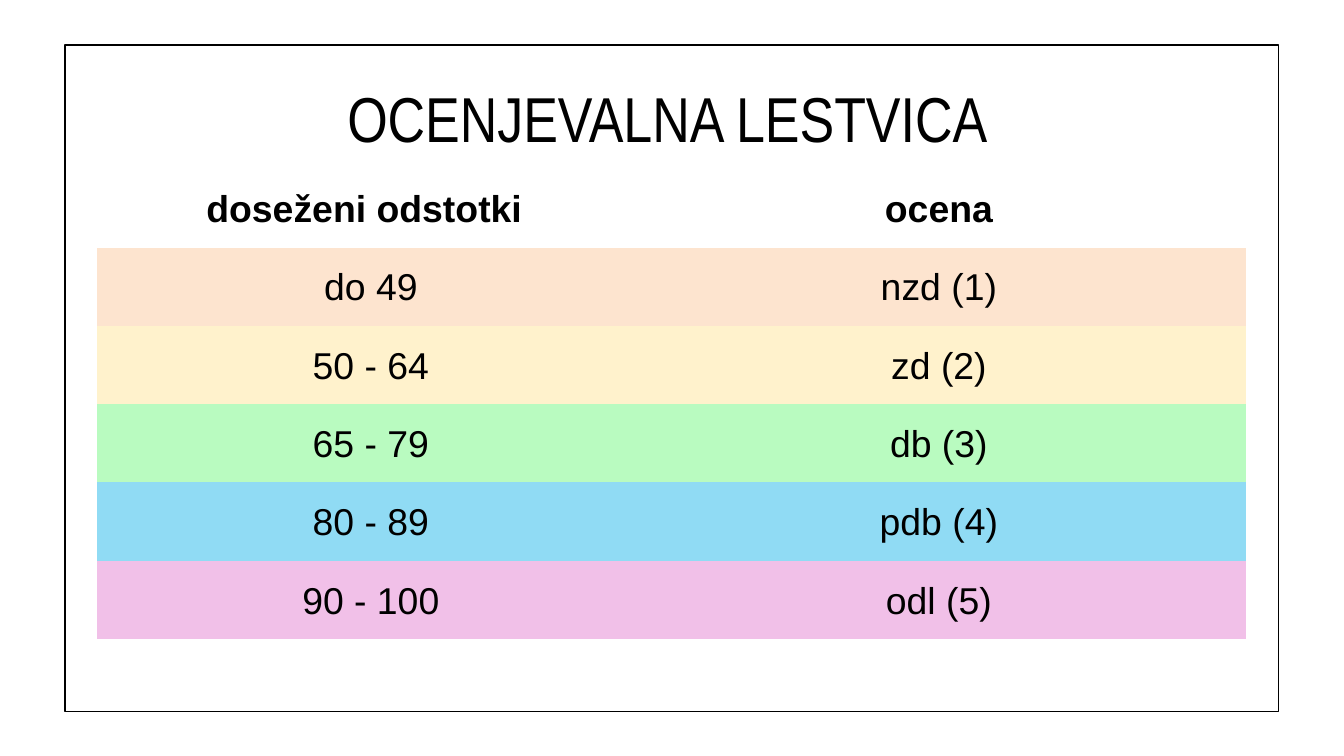
from pptx import Presentation
from pptx.dml.color import RGBColor
from pptx.enum.shapes import MSO_SHAPE
from pptx.enum.text import MSO_AUTO_SIZE, PP_ALIGN
from pptx.util import Cm, Pt

TITLE = "OCENJEVALNA LESTVICA"
ROWS = [
    ("doseženi odstotki", "ocena", None),
    ("do 49", "nzd (1)", "peach"),
    ("50 - 64", "zd (2)", "cream"),
    ("65 - 79", "db (3)", "green"),
    ("80 - 89", "pdb (4)", "blue"),
    ("90 - 100", "odl (5)", "pink"),
]
COLORS = {
    "black": "000000", "white": "FFFFFF", "peach": "FDE4CF",
    "cream": "FFF2CC", "green": "B9FBC0", "blue": "90DBF4", "pink": "F1C0E8",
}
WIDTHS = [Cm(10.11), Cm(11.61)]
HEIGHT = Cm(1.48)
PAD = Cm(0.25)
PLAIN = "{2D5ABB26-0587-4C30-8999-92F81FD0307C}"


def color(name):
    return RGBColor.from_string(COLORS[name])


def pad(item):
    item.margin_left = item.margin_right = PAD
    item.margin_top = item.margin_bottom = PAD


def write(para, text, size, face, bold=False):
    para.alignment = PP_ALIGN.CENTER
    run = para.add_run()
    run.text = text
    run.font.size = Pt(size)
    run.font.name = face
    run.font.bold = bold
    run.font.color.rgb = color("black")


deck = Presentation()
deck.slide_width, deck.slide_height = Cm(25.4), Cm(14.29)
slide = deck.slides.add_slide(deck.slide_layouts[6])
shapes = slide.shapes

frame = shapes.add_shape(MSO_SHAPE.RECTANGLE, Cm(1.23), Cm(0.85), Cm(22.94), Cm(12.6))
frame.shadow.inherit = False
frame.fill.solid()
frame.fill.fore_color.rgb = color("white")
frame.line.color.rgb = color("black")
frame.line.width = Pt(0.75)

title = shapes.add_textbox(Cm(1.4), Cm(1.24), Cm(22.43), Cm(1.96)).text_frame
title.word_wrap = True
title.auto_size = MSO_AUTO_SIZE.SHAPE_TO_FIT_TEXT
pad(title)
write(title.paragraphs[0], TITLE, 34, "Arial Narrow")

grid = shapes.add_table(
    len(ROWS), len(WIDTHS), Cm(1.83), Cm(3.2), sum(WIDTHS), HEIGHT * len(ROWS)
).table
grid.first_row = grid.horz_banding = False
grid._tbl.tblPr.find("{*}tableStyleId").text = PLAIN
for col, width in zip(grid.columns, WIDTHS):
    col.width = width

for row, (*texts, tint) in enumerate(ROWS):
    grid.rows[row].height = HEIGHT
    for col, text in enumerate(texts):
        cell = grid.cell(row, col)
        pad(cell)
        if tint:
            cell.fill.solid()
            cell.fill.fore_color.rgb = color(tint)
        else:
            cell.fill.background()
        para = cell.text_frame.paragraphs[0]
        para.line_spacing = 1.15
        if tint and col == 0:
            para._p.get_or_add_pPr().set("marL", str(PAD))
        write(para, text, 20, "Arial", bold=not tint)

deck.save("out.pptx")
